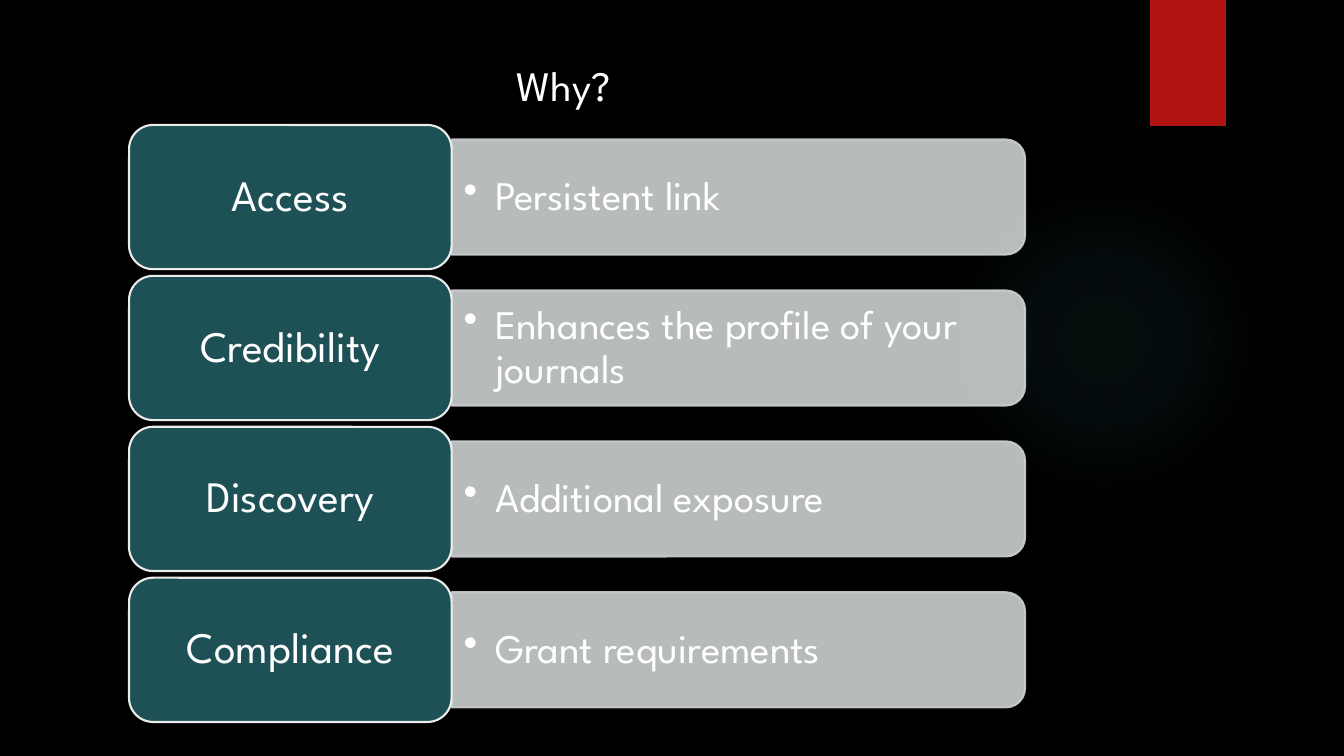
from lxml.etree import SubElement
from pptx import Presentation
from pptx.dml.color import RGBColor
from pptx.enum.shapes import MSO_SHAPE
from pptx.enum.text import MSO_ANCHOR, PP_ALIGN
from pptx.oxml import parse_xml
from pptx.oxml.ns import nsdecls, qn
from pptx.util import Pt

FONT = "League Spartan"
WHITE = "FFFFFF"
REASONS = [
    ("Access", "Persistent link"),
    ("Credibility", "Enhances the profile of your journals"),
    ("Discovery", "Additional exposure"),
    ("Compliance", "Grant requirements"),
]
FIRST_CENTRE, ROW_PITCH = 140.8, 107.8
LABEL_LEFT, LABEL_WIDTH, LABEL_HEIGHT = 92.2, 230.4, 103
BAR_LEFT, BAR_LENGTH, BAR_HEIGHT = LABEL_LEFT + LABEL_WIDTH, 409.6, 82.2


def colour(hex_string):
    return RGBColor.from_string(hex_string)


def add_block(slide, preset, left, top, width, height, fill, line=None):
    block = slide.shapes.add_shape(preset, Pt(left), Pt(top), Pt(width), Pt(height))
    block.shadow.inherit = False
    block.fill.solid()
    block.fill.fore_color.rgb = colour(fill)
    if line:
        block.line.color.rgb = colour(line)
        block.line.width = Pt(1.5)
    else:
        block.line.fill.background()
    return block


def write(frame, text, size, align, side_inset, spacing=0.9, bullet=False):
    frame.word_wrap = True
    frame.vertical_anchor = MSO_ANCHOR.MIDDLE
    frame.margin_left = frame.margin_right = Pt(side_inset)
    frame.margin_top = frame.margin_bottom = Pt(4)
    paragraph = frame.paragraphs[0]
    paragraph.text = text
    paragraph.alignment = align
    paragraph.line_spacing = spacing
    if bullet:
        properties = paragraph._p.get_or_add_pPr()
        properties.set("marL", str(Pt(22.5)))
        properties.set("indent", str(-Pt(22.5)))
        SubElement(properties, qn("a:buChar"), char="•")
    paragraph.font.name = FONT
    paragraph.font.size = Pt(size)
    paragraph.font.color.rgb = colour(WHITE)


def add_text(slide, left, top, width, height, *content, **options):
    box = slide.shapes.add_textbox(Pt(left), Pt(top), Pt(width), Pt(height))
    write(box.text_frame, *content, **options)


def add_glow(slide):
    glow = add_block(slide, MSO_SHAPE.OVAL, 677.5, 131.8, 221.8, 221.8, "50B9C1")
    stops = "".join(
        f'<a:gs pos="{position * 1000}"><a:srgbClr val="50B9C1">'
        f'<a:alpha val="{alpha * 1000}"/></a:srgbClr></a:gs>'
        for position, alpha in [(0, 7), (36, 6), (69, 0)]
    )
    gradient = parse_xml(
        f'<a:gradFill {nsdecls("a")}><a:gsLst>{stops}</a:gsLst><a:path path="circle">'
        '<a:fillToRect l="50000" t="50000" r="50000" b="50000"/></a:path></a:gradFill>'
    )
    properties = glow._element.spPr
    properties.replace(properties.find(qn("a:solidFill")), gradient)


def add_bar(slide, centre):
    bar = add_block(
        slide, MSO_SHAPE.ROUND_2_SAME_RECTANGLE,
        BAR_LEFT + (BAR_LENGTH - BAR_HEIGHT) / 2, centre - BAR_LENGTH / 2,
        BAR_HEIGHT, BAR_LENGTH, "CDD0D1", "CDD0D1",
    )
    bar.rotation = 90
    for tint in bar._element.spPr.iter(qn("a:srgbClr")):
        SubElement(tint, qn("a:alpha"), val="90000")


def add_reason(slide, centre, label, benefit):
    add_bar(slide, centre)
    add_text(slide, BAR_LEFT, centre - 37, 405.4, 74, benefit, 29,
             PP_ALIGN.LEFT, 8.6, bullet=True)
    tile = add_block(slide, MSO_SHAPE.ROUNDED_RECTANGLE, LABEL_LEFT,
                     centre - LABEL_HEIGHT / 2, LABEL_WIDTH, LABEL_HEIGHT,
                     "1E5155", "EBEBEB")
    write(tile.text_frame, label, 31, PP_ALIGN.CENTER, 9)


def main():
    deck = Presentation()
    deck.slide_width, deck.slide_height = Pt(960), Pt(540)
    slide = deck.slides.add_slide(deck.slide_layouts[6])
    slide.background.fill.solid()
    slide.background.fill.fore_color.rgb = colour("000000")
    add_glow(slide)
    add_block(slide, MSO_SHAPE.RECTANGLE, 821.6, 0, 54, 90, "B01513")
    add_text(slide, 157, 38.9, 491, 43.9, "Why?", 30, PP_ALIGN.CENTER, 7.2, spacing=1.0)
    for row, (label, benefit) in enumerate(REASONS):
        add_reason(slide, FIRST_CENTRE + row * ROW_PITCH, label, benefit)
    deck.save("out.pptx")


if __name__ == "__main__":
    main()
